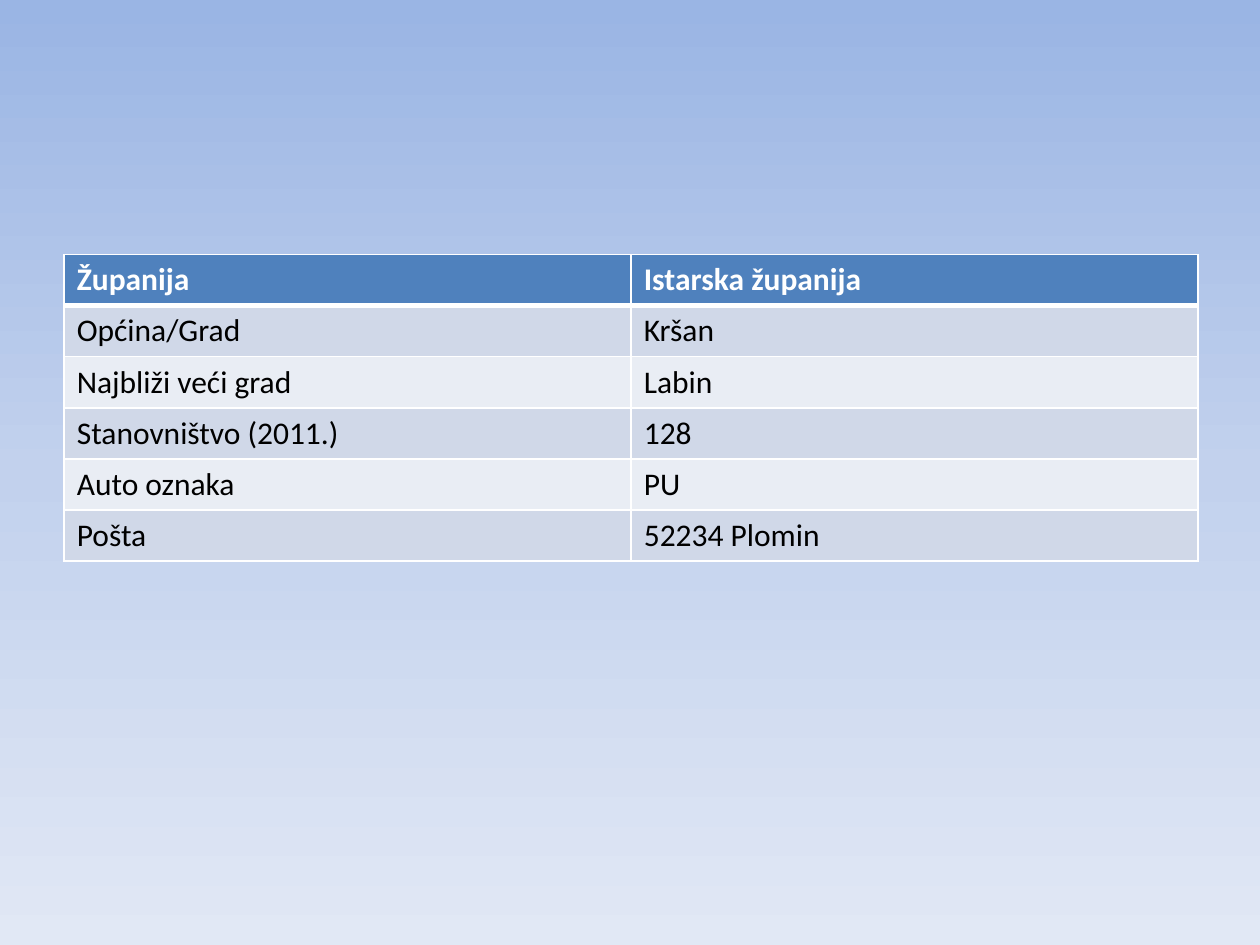
from copy import deepcopy

from lxml import etree
from pptx import Presentation
from pptx import util as u
from pptx.dml.color import RGBColor
from pptx.oxml.ns import qn

COLORS = {
    "sky": "9AB5E4", "mist": "C2D1ED", "haze": "E1E8F5",
    "header": "4F81BD", "band": "D0D8E8", "light": "E9EDF4",
    "white": "FFFFFF", "black": "000000",
}

ROWS = [
    ("Županija", "Istarska županija"),
    ("Općina/Grad", "Kršan"),
    ("Najbliži veći grad", "Labin"),
    ("Stanovništvo (2011.)", "128"),
    ("Auto oznaka", "PU"),
    ("Pošta", "52234 Plomin"),
]


class SlideBuilder:
    """Holds the text style and the current page, and adds elements to it."""

    def __init__(self, page, font="Calibri", size=18):
        self.page = page
        self.font = font
        self.size = u.Pt(size)

    def color(self, name):
        return RGBColor.from_string(COLORS[name])

    def background(self, names):
        fill = self.page.background.fill
        fill.gradient()
        fill.gradient_angle = 270
        stop_list = self.page.element.find(".//" + qn("a:gsLst"))
        while len(stop_list) < len(names):
            stop_list.append(deepcopy(stop_list[0]))
        for index, (stop, name) in enumerate(zip(fill.gradient_stops, names)):
            stop.position = index / (len(names) - 1)
            stop.color.rgb = self.color(name)

    def borders(self, cell, widths):
        properties = cell._tc.get_or_add_tcPr()
        for side, width in widths.items():
            line = etree.SubElement(properties, qn(f"a:ln{side}"), w=str(u.Pt(width)))
            solid = etree.SubElement(line, qn("a:solidFill"))
            etree.SubElement(solid, qn("a:srgbClr"), val=COLORS["white"])

    def cell(self, cell, words, row):
        header = row == 0
        self.borders(cell, {"L": 1, "R": 1, "T": 3 if row == 1 else 1, "B": 3 if header else 1})
        cell.fill.solid()
        cell.fill.fore_color.rgb = self.color("header" if header else "band" if row % 2 else "light")
        span = cell.text_frame.paragraphs[0].add_run()
        span.text = words
        span.font.name = self.font
        span.font.size = self.size
        span.font.bold = header
        span.font.color.rgb = self.color("white" if header else "black")

    def table(self, rows, left, top, width, height):
        frame = self.page.shapes.add_table(len(rows), len(rows[0]), left, top, width, height)
        for row, entries in enumerate(rows):
            for column, words in enumerate(entries):
                self.cell(frame.table.cell(row, column), words, row)


def main():
    deck = Presentation()
    deck.slide_width, deck.slide_height = u.Inches(10), u.Inches(7.5)
    builder = SlideBuilder(deck.slides.add_slide(deck.slide_layouts[6]))
    builder.background(["sky", "mist", "haze"])
    builder.table(ROWS, u.Inches(0.51), u.Inches(2.02), u.Inches(9), u.Inches(2.43))
    deck.save("out.pptx")


if __name__ == "__main__":
    main()
